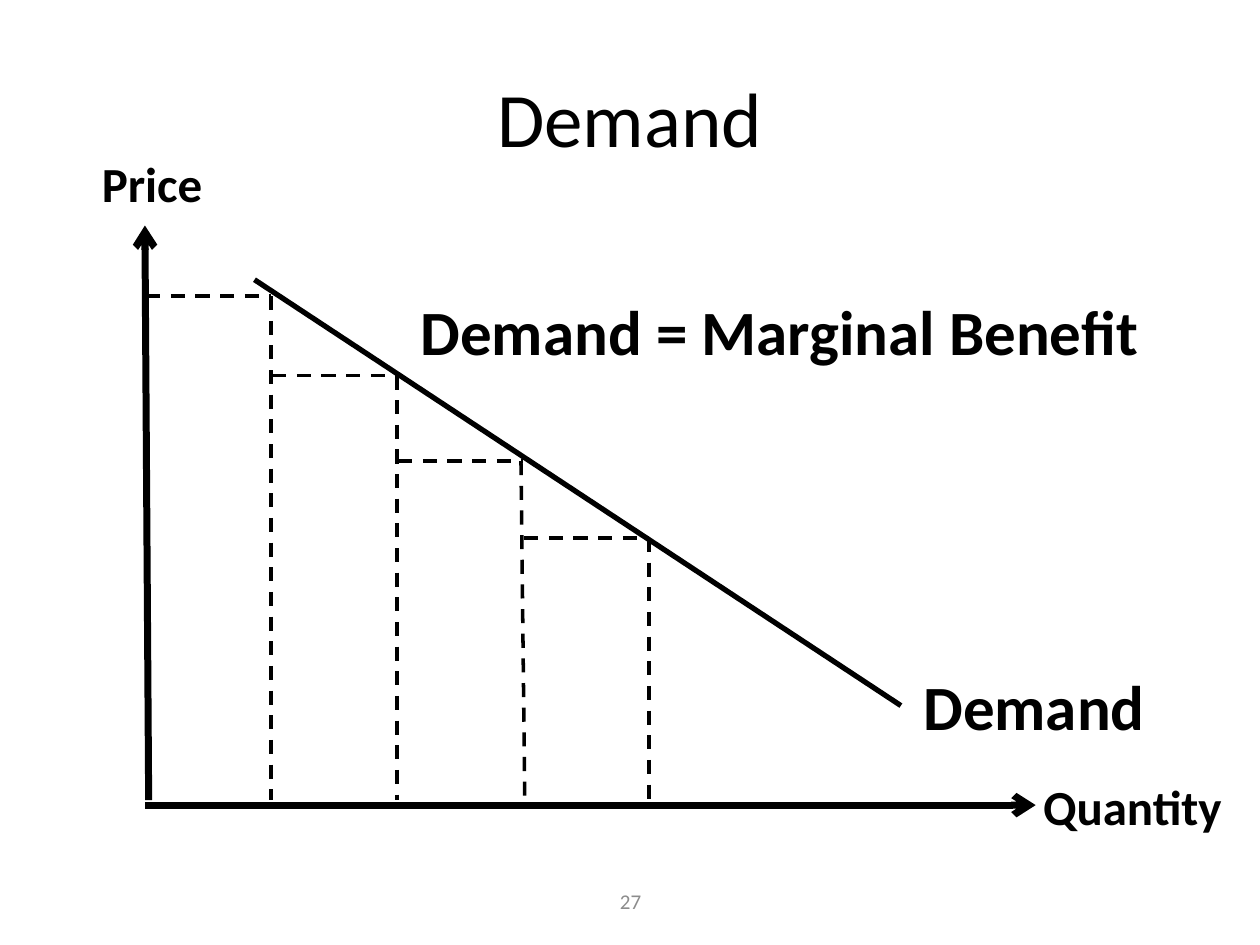
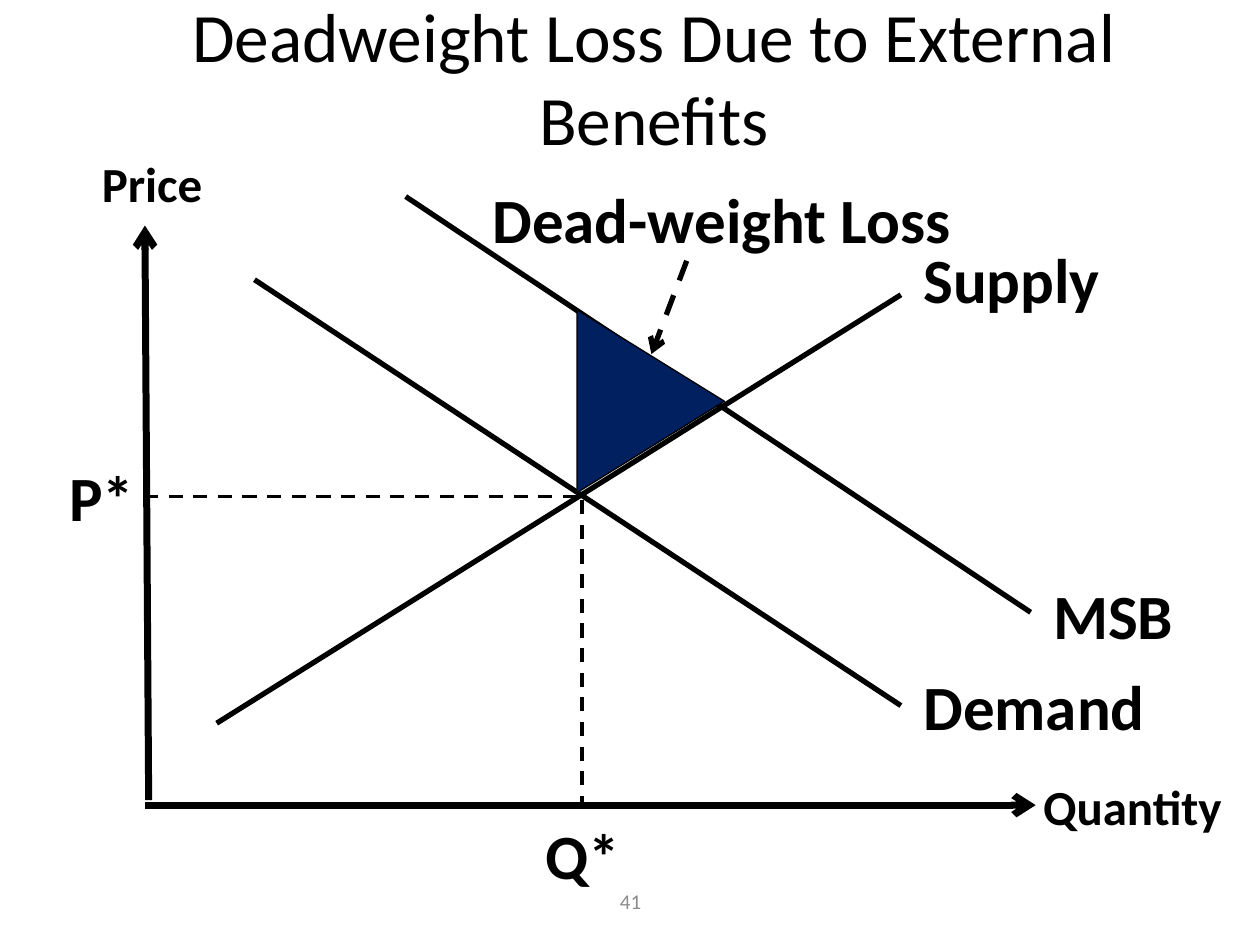
from lxml import etree
from pptx import Presentation
from pptx.dml.color import RGBColor
from pptx.enum.dml import MSO_LINE
from pptx.enum.shapes import MSO_CONNECTOR, MSO_SHAPE
from pptx.enum.text import MSO_ANCHOR, MSO_AUTO_SIZE, PP_ALIGN
from pptx.oxml.ns import qn
from pptx.util import Inches, Pt

STRAIGHT = MSO_CONNECTOR.STRAIGHT
TRIANGLE = MSO_SHAPE.ISOSCELES_TRIANGLE
DASH = MSO_LINE.DASH
MIDDLE = MSO_ANCHOR.MIDDLE
GROW = MSO_AUTO_SIZE.SHAPE_TO_FIT_TEXT
CENTER = PP_ALIGN.CENTER

FONT = "Calibri"
BLACK, GREY, NAVY = "000000", "8C8C8C", "002060"
AXIS, CURVE, GUIDE = 4, 3, 2
DEMAND = (2.02, 2.22), (7.15, 5.6)


def color(code):
    return RGBColor.from_string(code)


def style(frame, text, size, code=BLACK, bold=False):
    para = frame.paragraphs[0]
    para.text = text
    font = para.font
    font.name, font.size, font.bold = FONT, Pt(size), bold
    font.color.rgb = color(code)
    return para


def block(slide, text, box, size, code=BLACK):
    """Add wrapped text, centred both ways in its box."""
    frame = slide.shapes.add_textbox(*map(Inches, box)).text_frame
    frame.word_wrap = True
    frame.vertical_anchor = MIDDLE
    style(frame, text, size, code).alignment = CENTER


def label(slide, text, left, top, width, size=36):
    """Add a bold one-line label that fits its text."""
    high = 0.71 if size == 36 else 0.57
    box = slide.shapes.add_textbox(*map(Inches, (left, top, width, high)))
    frame = box.text_frame
    frame.word_wrap = False
    frame.auto_size = GROW
    style(frame, text, size, bold=True)


def line(slide, start, end, width=CURVE, dash=False, arrow=False):
    link = slide.shapes.add_connector(STRAIGHT, *map(Inches, (*start, *end)))
    link.line.color.rgb = color(BLACK)
    link.line.width = Pt(width)
    if dash:
        link.line.dash_style = DASH
    if arrow:
        etree.SubElement(link.line._get_or_add_ln(), qn("a:tailEnd"), type="arrow")
    etree.SubElement(link._element.spPr, qn("a:effectLst"))


def guide(slide, start, end):
    line(slide, start, end, GUIDE, dash=True)


def graph(deck, title, box, size, number):
    """Add a slide with title, number, both axes and the demand curve."""
    slide = deck.slides.add_slide(deck.slide_layouts[6])
    block(slide, title, box, size)
    block(slide, number, (3.42, 6.95, 3.17, 0.4), 12, GREY)
    line(slide, (1.18, 6.35), (1.15, 1.79), AXIS, arrow=True)
    line(slide, (1.15, 6.39), (8.22, 6.39), AXIS, arrow=True)
    label(slide, "Price", 0.71, 1.17, 1.01, 28)
    label(slide, "Quantity", 8.18, 6.11, 1.64, 28)
    line(slide, *DEMAND)
    label(slide, "Demand", 7.23, 5.25, 1.98)
    return slide


def steps(slide):
    """Draw the dashed stairs under the demand curve."""
    for i, (top, lean) in enumerate([(2.35, 0), (2.98, 0), (3.66, 0.03), (4.27, 0)]):
        left = 1.16 + i
        right = left + 0.99
        guide(slide, (left, top), (right, top))
        guide(slide, (right - lean / 2, top), (right + lean / 2, 6.35))


def wedge(slide):
    """Fill the loss triangle, which points right."""
    shape = slide.shapes.add_shape(TRIANGLE, *map(Inches, (4.44, 2.6, 1.45, 1.17)))
    shape.rotation = 90
    shape.shadow.inherit = False
    shape.fill.solid()
    shape.fill.fore_color.rgb = color(NAVY)
    shape.line.color.rgb = color(BLACK)
    shape.line.width = Pt(0.75)


def main():
    deck = Presentation()
    deck.slide_width, deck.slide_height = Inches(10), Inches(7.5)

    slide = graph(deck, "Demand", (0.5, 0.3, 9, 1.25), 44, "27")
    steps(slide)
    label(slide, "Demand = Marginal Benefit", 3.24, 2.27, 5.96)

    slide = graph(deck, "Deadweight Loss Due to External Benefits",
                  (0.56, 0, 9.26, 1.21), 39.6, "41")
    line(slide, (1.72, 5.74), (7.15, 2.34))
    label(slide, "Supply", 7.23, 1.86, 1.62)
    guide(slide, (4.58, 3.94), (1.15, 3.94))
    guide(slide, (4.62, 3.97), (4.62, 6.4))
    label(slide, "P*", 0.45, 3.59, 0.72)
    label(slide, "Q*", 4.23, 6.43, 0.8)
    line(slide, (3.22, 1.56), (8.18, 4.86))
    label(slide, "MSB", 8.26, 4.53, 1.16)
    wedge(slide)
    label(slide, "Dead-weight Loss", 3.81, 1.38, 3.89)
    line(slide, (5.45, 2.07), (5.17, 2.81), dash=True, arrow=True)

    deck.save("out.pptx")


if __name__ == "__main__":
    main()
